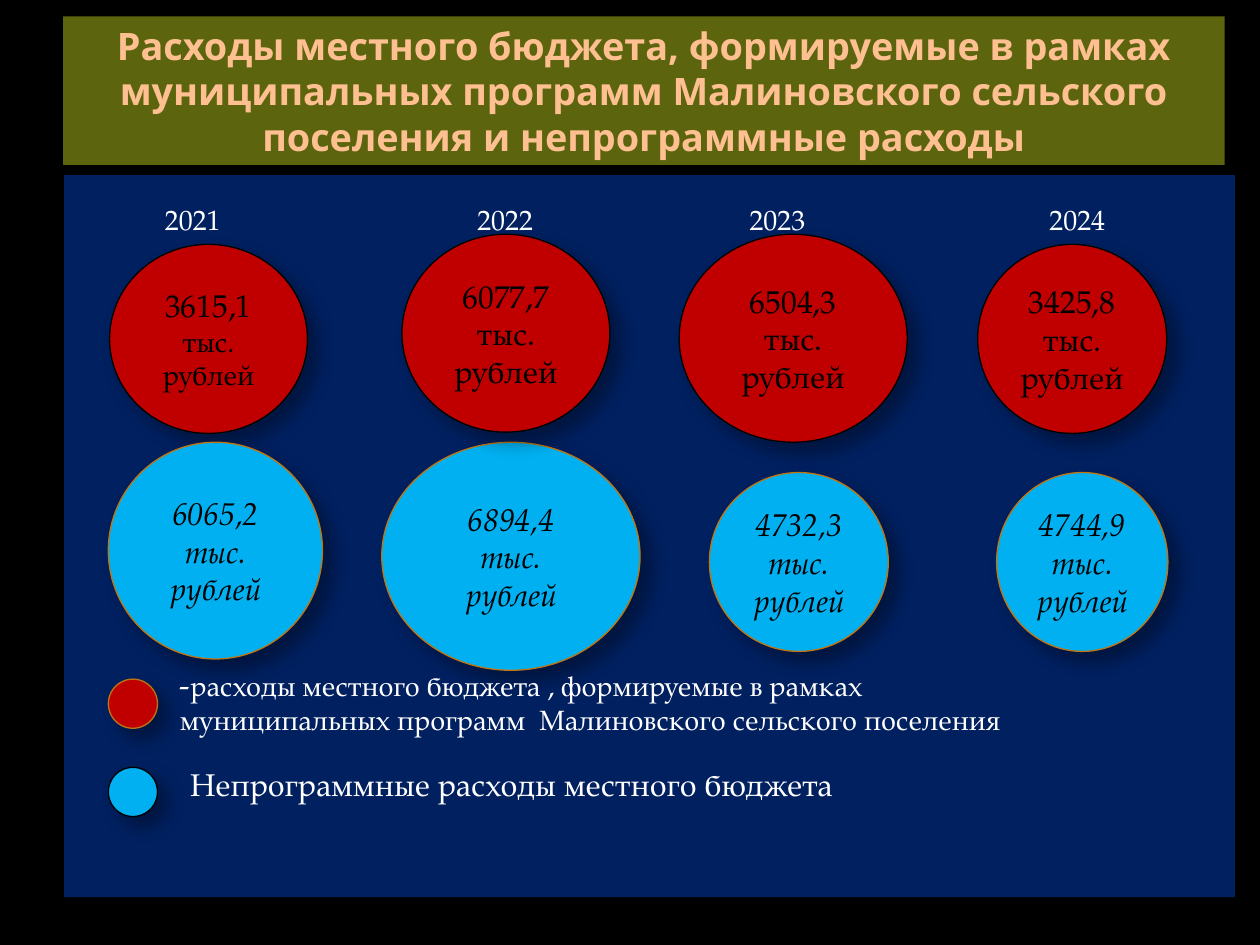
from dataclasses import dataclass

from lxml import etree
from pptx import Presentation
from pptx import util as u
from pptx.dml.color import RGBColor
from pptx.enum import shapes, text
from pptx.oxml import ns

BLACK = RGBColor(0x00, 0x00, 0x00)
WHITE = RGBColor(0xFF, 0xFF, 0xFF)
OLIVE = RGBColor(0x5C, 0x65, 0x0D)
PEACH = RGBColor(0xFF, 0xC0, 0x91)
NAVY = RGBColor(0x00, 0x20, 0x60)
RED = RGBColor(0xC0, 0x00, 0x00)
BLUE = RGBColor(0x00, 0xB0, 0xF0)
AMBER = RGBColor(0xC0, 0x75, 0x12)
SERIF = "TeX Gyre Pagella"
UNIT = "тыс. рублей"


@dataclass
class Disc:
    left: float
    top: float
    wide: float
    high: float
    fill: RGBColor
    edge: RGBColor
    sum: str = ""
    size: float = 18


@dataclass
class Note:
    left: float
    top: float
    wide: float
    high: float
    runs: list[tuple[str, float]]


DISCS = [
    Disc(0.87, 1.94, 1.57, 1.5, RED, BLACK, "3615,1", 16),
    Disc(5.39, 1.86, 1.81, 1.65, RED, BLACK, "6504,3"),
    Disc(0.86, 3.51, 1.7, 1.72, BLUE, AMBER, "6065,2"),
    Disc(3.03, 3.51, 2.05, 1.81, BLUE, AMBER, "6894,4"),
    Disc(0.86, 5.39, 0.39, 0.39, RED, AMBER),
    Disc(0.86, 6.09, 0.39, 0.39, BLUE, BLACK),
    Disc(3.19, 1.86, 1.65, 1.57, RED, BLACK, "6077,7"),
    Disc(5.63, 3.75, 1.42, 1.42, BLUE, AMBER, "4732,3"),
    Disc(7.76, 1.94, 1.5, 1.5, RED, BLACK, "3425,8"),
    Disc(7.91, 3.75, 1.36, 1.42, BLUE, AMBER, "4744,9"),
]
NOTES = [
    Note(1.33, 5.23, 7.29, 0.67, [
        ("-", 18),
        ("расходы местного бюджета , формируемые в рамках "
         "муниципальных программ  Малиновского сельского поселения", 16),
    ]),
    Note(1.41, 6.02, 6.88, 0.4, [("Непрограммные расходы местного бюджета", 18)]),
]
YEARS = [("2021", 0.7), ("2022", 3.18), ("2023", 5.34), ("2024", 7.72)]


def add_run(para, words: str, size: float, tint: RGBColor, face: str = SERIF,
            bold: bool = False, slant: bool = False) -> None:
    run = para.add_run()
    run.text = words
    font = run.font
    font.size, font.name = u.Pt(size), face
    font.bold, font.italic = bold, slant
    font.color.rgb = tint


def add_form(slide, kind, left: float, top: float, wide: float, high: float,
             fill: RGBColor):
    form = slide.shapes.add_shape(kind, u.Inches(left), u.Inches(top),
                                  u.Inches(wide), u.Inches(high))
    form.shadow.inherit = False
    form.fill.solid()
    form.fill.fore_color.rgb = fill
    form.line.fill.background()
    form.text_frame.word_wrap = True
    return form


def add_shade(form) -> None:
    glow = form._element.spPr.find(ns.qn("a:effectLst"))
    cast = etree.SubElement(glow, ns.qn("a:outerShdw"), blurRad=str(u.Pt(10.2)),
                            dist=str(u.Pt(8)), dir="2700000", algn="tl",
                            rotWithShape="0")
    tint = etree.SubElement(cast, ns.qn("a:srgbClr"), val=str(BLACK))
    etree.SubElement(tint, ns.qn("a:alpha"), val="35000")


def add_disc(slide, disc: Disc) -> None:
    form = add_form(slide, shapes.MSO_SHAPE.OVAL, disc.left, disc.top,
                    disc.wide, disc.high, disc.fill)
    form.line.color.rgb = disc.edge
    form.line.width = u.Pt(0.75)
    add_shade(form)
    if not disc.sum:
        return
    frame = form.text_frame
    frame.vertical_anchor = text.MSO_ANCHOR.MIDDLE
    rows = [(frame.paragraphs[0], disc.sum, 18),
            (frame.add_paragraph(), UNIT, disc.size)]
    for para, words, size in rows:
        para.alignment = text.PP_ALIGN.CENTER
        add_run(para, words, size, BLACK, slant=disc.fill == BLUE)


def add_note(slide, note: Note) -> None:
    box = slide.shapes.add_textbox(u.Inches(note.left), u.Inches(note.top),
                                   u.Inches(note.wide), u.Inches(note.high))
    box.text_frame.word_wrap = True
    for words, size in note.runs:
        add_run(box.text_frame.paragraphs[0], words, size, WHITE)


def add_title(slide) -> None:
    form = add_form(slide, shapes.MSO_SHAPE.RECTANGLE, 0.5, 0.13, 9.22, 1.18, OLIVE)
    form.text_frame.vertical_anchor = text.MSO_ANCHOR.MIDDLE
    para = form.text_frame.paragraphs[0]
    para.alignment = text.PP_ALIGN.CENTER
    add_run(para, "Расходы местного бюджета, формируемые в рамках "
            "муниципальных программ Малиновского сельского "
            "поселения и непрограммные расходы", 21.6, PEACH, "Open Sans", bold=True)


def add_panel(slide) -> None:
    form = add_form(slide, shapes.MSO_SHAPE.RECTANGLE, 0.51, 1.39, 9.29, 5.73, NAVY)
    form.text_frame.vertical_anchor = text.MSO_ANCHOR.TOP
    para = form.text_frame.paragraphs[0]
    para.alignment = text.PP_ALIGN.LEFT
    tabs = etree.SubElement(para._p.get_or_add_pPr(), ns.qn("a:tabLst"))
    for year, stop in YEARS:
        etree.SubElement(tabs, ns.qn("a:tab"), pos=str(u.Inches(stop)), algn="l")
        add_run(para, "\t", 28, WHITE)
        add_run(para, year, 16, WHITE)


def main() -> None:
    deck = Presentation()
    deck.slide_width, deck.slide_height = u.Inches(10), u.Inches(7.5)
    slide = deck.slides.add_slide(deck.slide_layouts[6])
    slide.background.fill.solid()
    slide.background.fill.fore_color.rgb = BLACK
    add_title(slide)
    add_panel(slide)
    for disc in DISCS:
        add_disc(slide, disc)
    for note in NOTES:
        add_note(slide, note)
    deck.save("out.pptx")


if __name__ == "__main__":
    main()
